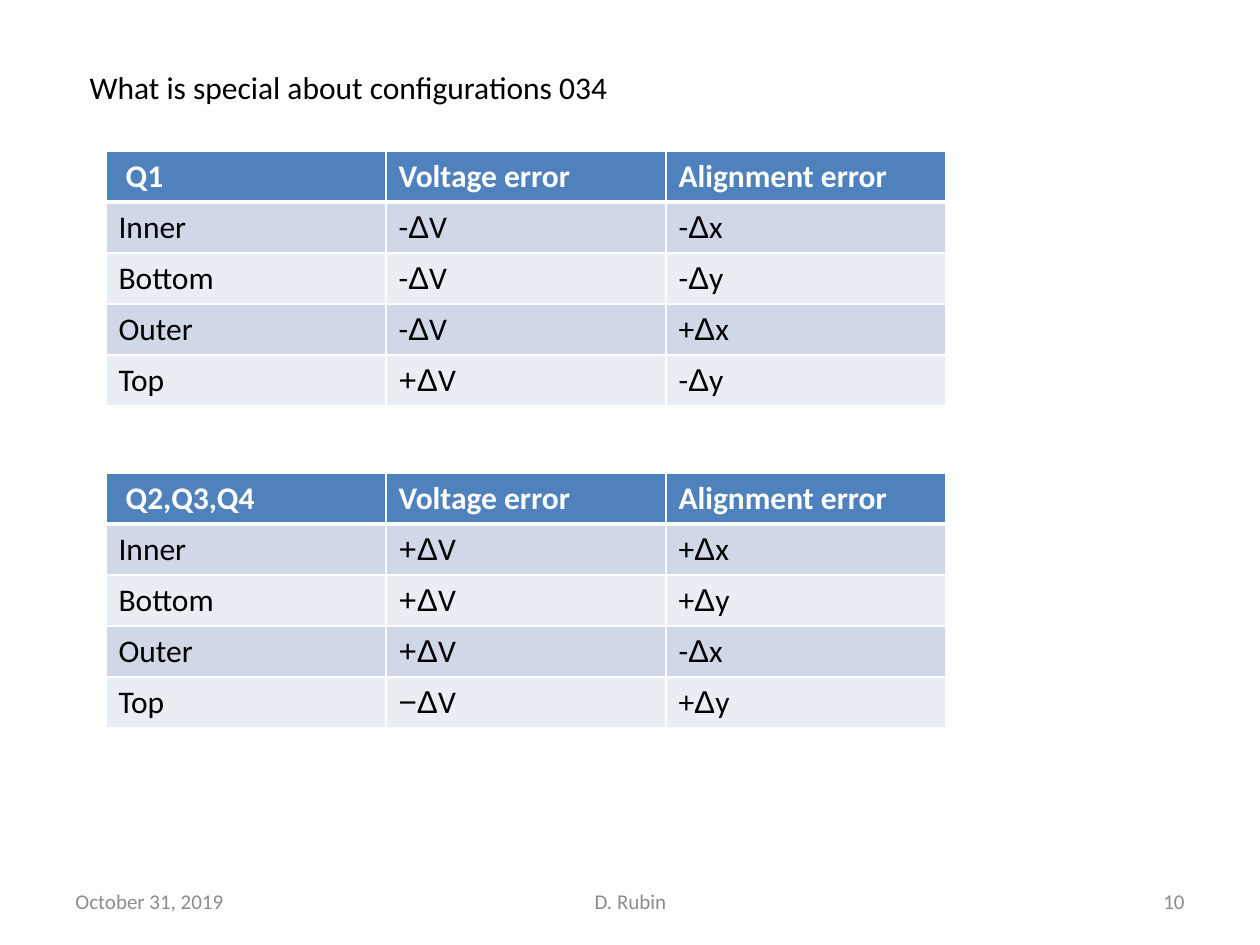
from lxml.etree import SubElement
from pptx import Presentation
from pptx.dml.color import RGBColor
from pptx.enum.text import MSO_ANCHOR, MSO_AUTO_SIZE, PP_ALIGN
from pptx.oxml.ns import qn
from pptx.util import Emu, Pt

PX = 914400 // 126
SIDES = ["Inner", "Bottom", "Outer", "Top"]
HEADINGS = ["Voltage error", "Alignment error"]
FIRST_QUAD = [("-ΔV", "-Δx"), ("-ΔV", "-Δy"), ("-ΔV", "+Δx"), ("+ΔV", "-Δy")]
OTHER_QUADS = [("+ΔV", "+Δx"), ("+ΔV", "+Δy"), ("+ΔV", "-Δx"), ("−ΔV", "+Δy")]


def px(value):
    return Emu(value * PX)


def color(hex_string):
    return RGBColor.from_string(hex_string)


def add_span(para, text, size=18, ink="000000", bold=False, font="Calibri"):
    span = para.add_run()
    span.text = text
    span.font.name = font
    span.font.size = Pt(size)
    span.font.bold = bold
    span.font.color.rgb = color(ink)


def add_error(para, text):
    """Write a sign, a delta and a variable, with the delta in Arial."""
    sign, delta, variable = text
    if variable == "V" and sign != "-":
        add_span(para, sign + delta, font="Arial")
    else:
        add_span(para, sign)
        add_span(para, delta, font="Arial")
    add_span(para, variable)


def set_borders(cell, top, bottom):
    properties = cell._tc.get_or_add_tcPr()
    for side, width in (("L", 1), ("R", 1), ("T", top), ("B", bottom)):
        line = SubElement(properties, qn(f"a:ln{side}"), w=str(Pt(width)))
        fill = SubElement(line, qn("a:solidFill"))
        SubElement(fill, qn("a:srgbClr"), val="FFFFFF")


def add_title(page, left, top, width, height):
    title = page.shapes.title
    title.left, title.top, title.width, title.height = map(px, (left, top, width, height))
    frame = title.text_frame
    frame.word_wrap = False
    frame.auto_size = MSO_AUTO_SIZE.NONE
    frame.vertical_anchor = MSO_ANCHOR.TOP
    para = frame.paragraphs[0]
    para.alignment = PP_ALIGN.LEFT
    add_span(para, "What is special about configurations 034")


def add_error_table(page, left, top, name, errors, column=280, row=51):
    rows = [(name, *HEADINGS)] + [(side, *pair) for side, pair in zip(SIDES, errors)]
    table = page.shapes.add_table(len(rows), 3, px(left), px(top),
                                  px(3 * column), px(len(rows) * row)).table
    for table_column in table.columns:
        table_column.width = px(column)
    for r, texts in enumerate(rows):
        table.rows[r].height = px(row)
        for c, text in enumerate(texts):
            cell = table.cell(r, c)
            para = cell.text_frame.paragraphs[0]
            # Thick rule between the heading and the body
            set_borders(cell, top=3 if r == 1 else 1, bottom=3 if r == 0 else 1)
            cell.fill.solid()
            if r == 0:
                cell.fill.fore_color.rgb = color("4F81BD")
                add_span(para, text, ink="FFFFFF", bold=True)
                continue
            cell.fill.fore_color.rgb = color("D0D8E8" if r % 2 else "E9EDF4")
            if c == 0:
                add_span(para, text)
            else:
                add_error(para, text)


def add_footer(page, top, height):
    parts = [
        (63, 294, "October 31, 2019", PP_ALIGN.LEFT),
        (431, 399, "D. Rubin", PP_ALIGN.CENTER),
        (903, 294, "10", PP_ALIGN.RIGHT),
    ]
    for left, width, text, alignment in parts:
        box = page.shapes.add_textbox(px(left), px(top), px(width), px(height))
        frame = box.text_frame
        frame.word_wrap = True
        frame.vertical_anchor = MSO_ANCHOR.MIDDLE
        para = frame.paragraphs[0]
        para.alignment = alignment
        add_span(para, text, size=12, ink="8C8C8C")


def main():
    deck = Presentation()
    deck.slide_width, deck.slide_height = px(1260), px(945)
    page = deck.slides.add_slide(deck.slide_layouts[5])
    add_footer(page, 876, 50)
    add_title(page, 77, 62, 558, 165)
    add_error_table(page, 106, 151, " Q1", FIRST_QUAD)
    add_error_table(page, 106, 473, " Q2,Q3,Q4", OTHER_QUADS)
    deck.save("out.pptx")


if __name__ == "__main__":
    main()
